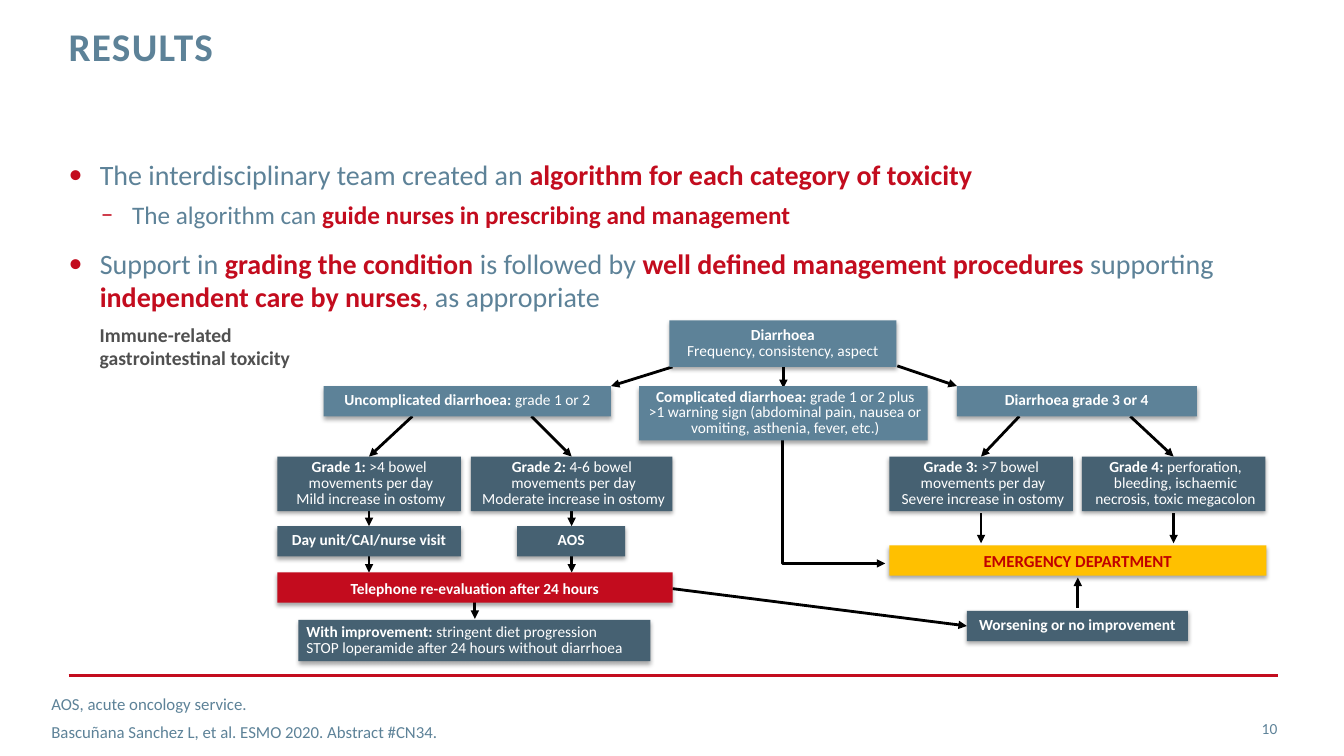
from dataclasses import dataclass

from lxml import etree
from pptx import Presentation
from pptx.dml.color import RGBColor
from pptx.enum import shapes, text
from pptx.oxml import ns
from pptx.util import Inches, Pt


@dataclass(frozen=True)
class Theme:
    font: str = "Calibri"
    blue: str = "5D8298"
    slate: str = "466172"
    red: str = "C30C1E"
    dark_red: str = "C00000"
    amber: str = "FFC000"
    grey: str = "505050"
    white: str = "FFFFFF"
    black: str = "000000"
    title: int = 28
    bullet: int = 20
    sub_bullet: int = 18
    label: int = 14
    note: int = 12
    box: int = 11
    line: int = 2


theme = Theme()
center, left_aligned = text.PP_ALIGN.CENTER, text.PP_ALIGN.LEFT


def add_runs(paragraph, runs, size):
    """Add (text, colour, bold) runs; a newline becomes a line break."""
    for words, color, bold in runs:
        for index, line in enumerate(words.split("\n")):
            if index:
                paragraph.add_line_break()
            if not line:
                continue
            run = paragraph.add_run()
            run.text = line
            run.font.name, run.font.size, run.font.bold = theme.font, Pt(size), bold
            run.font.color.rgb = RGBColor.from_string(color)


def set_frame(shape, insets=(0, 0, 0, 0), anchor=text.MSO_ANCHOR.TOP):
    """Prepare a text frame; insets are left, top, right, bottom."""
    frame = shape.text_frame
    frame.word_wrap = True
    frame.auto_size = text.MSO_AUTO_SIZE.NONE
    frame.vertical_anchor = anchor
    frame.margin_left, frame.margin_top, frame.margin_right, frame.margin_bottom = map(Inches, insets)
    return frame


presentation = Presentation()
presentation.slide_width, presentation.slide_height = Inches(13.33), Inches(7.5)
slide = presentation.slides.add_slide(presentation.slide_layouts[5])

# Title
title = slide.shapes.title
title.left, title.top, title.width, title.height = map(Inches, (0.68, 0.27, 9.56, 0.88))
paragraph = set_frame(title).paragraphs[0]
paragraph.alignment, paragraph.line_spacing = left_aligned, Pt(30)
add_runs(paragraph, [("RESULTS", theme.blue, True)], theme.title)
paragraph.runs[0].font._element.set("spc", "100")

# Bullets: level, space before, size, runs
bullets = [
    (0, 0, theme.bullet, [
        ("The interdisciplinary team created an ", theme.blue, False),
        ("algorithm for each category of toxicity", theme.red, True)]),
    (1, 6, theme.sub_bullet, [
        ("The algorithm can ", theme.blue, False),
        ("guide nurses in prescribing and management", theme.red, True)]),
    (0, 12, theme.bullet, [
        ("Support in ", theme.blue, False),
        ("grading the condition ", theme.red, True),
        ("is followed by ", theme.blue, False),
        ("well defined management procedures ", theme.red, True),
        ("supporting ", theme.blue, False),
        ("independent care by nurses", theme.red, True),
        (",", theme.red, False),
        (" as appropriate", theme.blue, False)]),
]
body = set_frame(slide.shapes.add_textbox(*map(Inches, (0.68, 1.56, 11.99, 1.63))))
for index, (level, space, size, runs) in enumerate(bullets):
    paragraph = body.add_paragraph() if index else body.paragraphs[0]
    paragraph.level = level
    properties = paragraph._p.get_or_add_pPr()
    properties.set("marL", str(Inches(0.31 + 0.32 * level)))
    properties.set("indent", str(-Inches(0.31)))
    bullet_color = etree.SubElement(properties, ns.qn("a:buClr"))
    etree.SubElement(bullet_color, ns.qn("a:srgbClr"), val=theme.red)
    etree.SubElement(properties, ns.qn("a:buFont"), typeface=theme.font)
    etree.SubElement(properties, ns.qn("a:buChar"), char="•–"[level])
    paragraph.space_before = Pt(space)
    add_runs(paragraph, runs, size)

# Label of the flow chart
label = slide.shapes.add_textbox(*map(Inches, (0.89, 3.15, 2.72, 0.57)))
paragraph = set_frame(label, (0.1, 0.05, 0.1, 0.05)).paragraphs[0]
add_runs(paragraph, [("Immune-related gastrointestinal toxicity", theme.grey, True)], theme.label)

# Arrows, drawn first so that boxes cover their starts
arrows = [
    (6.67, 3.64, 6.06, 3.83), (7.77, 3.54, 7.77, 3.85), (8.9, 3.63, 9.49, 3.83),
    (4.09, 4.13, 3.66, 4.53), (5.27, 4.13, 5.67, 4.53),
    (10.11, 4.13, 9.73, 4.53), (11.21, 4.13, 11.64, 4.53),
    (4.71, 5.83, 4.71, 6.14), (6.67, 5.84, 9.59, 6.21), (10.69, 6.03, 10.69, 5.73),
]
arrows += [(x, y, x, y + 0.3) for x in (3.66, 5.67) for y in (4.92, 5.38)]
arrows += [(x, 5.09, x, 5.39) for x in (9.73, 11.64)]
lines = [slide.shapes.add_connector(shapes.MSO_CONNECTOR.STRAIGHT, *map(Inches, ends)) for ends in arrows]

builder = slide.shapes.build_freeform(Inches(7.76), Inches(3.98))
builder.add_line_segments([(Inches(7.76), Inches(5.59)), (Inches(8.78), Inches(5.59))], close=False)
elbow = builder.convert_to_shape()
elbow.fill.background()
for arrow in lines + [elbow]:
    arrow.line.width = Pt(theme.line)
    arrow.line.color.rgb = RGBColor.from_string(theme.black)
    etree.SubElement(arrow.line._get_or_add_ln(), ns.qn("a:tailEnd"), type="triangle")

# Red rule above the footer
rule = slide.shapes.add_connector(
    shapes.MSO_CONNECTOR.STRAIGHT, *map(Inches, (0.68, 6.7, 12.68, 6.7)))
rule.line.width = Pt(theme.line)
rule.line.color.rgb = RGBColor.from_string(theme.red)
for line in lines + [elbow, rule]:
    properties = line._element.spPr
    if properties.find(ns.qn("a:effectLst")) is None:
        etree.SubElement(properties, ns.qn("a:effectLst"))

# Boxes: place, fill, left and top inset, alignment, bold lead, plain rest
row, tall = 0.3, 0.54
wide, even, low = (0.08, 0.04), (0.04, 0.04), (0.04, 0.08)
boxes = [
    ((6.64, 3.18, 2.25, 0.46), theme.blue, even, center,
     "Diarrhoea\n", "Frequency, consistency, aspect"),
    ((3.21, 3.83, 2.85, row), theme.blue, even, center,
     "Uncomplicated diarrhoea: ", "grade 1 or 2"),
    ((6.34, 3.83, 2.86, tall), theme.blue, wide, center, "Complicated diarrhoea: ",
     "grade 1 or 2 plus >1 warning sign (abdominal pain, nausea or vomiting, asthenia, fever, etc.)"),
    ((9.49, 3.83, 2.38, row), theme.blue, even, center, "Diarrhoea grade 3 or 4", ""),
    ((2.75, 4.53, 1.82, tall), theme.slate, wide, center,
     "Grade 1: ", ">4 bowel \nmovements per day\nMild increase in ostomy"),
    ((4.67, 4.53, 2, tall), theme.slate, wide, center,
     "Grade 2: ", "4-6 bowel \nmovements per day\nModerate increase in ostomy"),
    ((8.82, 4.53, 1.82, tall), theme.slate, wide, center,
     "Grade 3: ", ">7 bowel \nmovements per day\nSevere increase in ostomy"),
    ((10.73, 4.53, 1.82, tall), theme.slate, wide, center,
     "Grade 4: ", "perforation,\nbleeding, ischaemic necrosis, toxic megacolon"),
    ((2.75, 5.22, 1.82, row), theme.slate, even, center, "Day unit/CAI/nurse visit", ""),
    ((5.13, 5.22, 1.07, row), theme.slate, even, center, "AOS", ""),
    ((2.75, 5.68, 3.92, row), theme.red, low, center, "Telephone re-evaluation after 24 hours", ""),
    ((8.82, 5.41, 3.74, row), theme.amber, low, center, "EMERGENCY DEPARTMENT", ""),
    ((9.59, 6.06, 2.19, row), theme.slate, even, center, "Worsening or no improvement", ""),
    ((2.96, 6.15, 3.49, 0.41), theme.slate, wide, left_aligned, "With improvement: ",
     "stringent diet progression\nSTOP loperamide after 24 hours without diarrhoea"),
]
for place, fill, insets, alignment, lead, rest in boxes:
    box = slide.shapes.add_shape(shapes.MSO_SHAPE.ROUNDED_RECTANGLE, *map(Inches, place))
    box.adjustments[0] = 0
    box.fill.solid()
    box.fill.fore_color.rgb = RGBColor.from_string(fill)
    box.line.fill.background()
    box.shadow.inherit = False
    effects = box._element.spPr.find(ns.qn("a:effectLst"))
    shadow = etree.SubElement(effects, ns.qn("a:outerShdw"), blurRad=str(Pt(3.1)),
                              dist=str(Pt(1.8)), dir="5400000", rotWithShape="0")
    shadow_color = etree.SubElement(shadow, ns.qn("a:srgbClr"), val=theme.black)
    etree.SubElement(shadow_color, ns.qn("a:alpha"), val="35000")
    paragraph = set_frame(box, (*insets, 0.04, 0.04), text.MSO_ANCHOR.MIDDLE).paragraphs[0]
    paragraph.alignment, paragraph.line_spacing = alignment, 0.85
    color, size = (theme.dark_red, theme.note) if fill == theme.amber else (theme.white, theme.box)
    add_runs(paragraph, [(lead, color, True), (rest, color, False)], size)

# Footnotes and slide number
footer = slide.shapes.add_textbox(*map(Inches, (0.51, 6.92, 8.33, 0.4)))
frame = set_frame(footer, anchor=text.MSO_ANCHOR.MIDDLE)
notes = ["AOS, acute oncology service.", "Bascuñana Sanchez L, et al. ESMO 2020. Abstract #CN34."]
for index, note in enumerate(notes):
    paragraph = frame.add_paragraph() if index else frame.paragraphs[0]
    paragraph.space_after = Pt(6)
    add_runs(paragraph, [(note, theme.blue, False)], theme.note)

number = slide.shapes.add_textbox(*map(Inches, (11.81, 7.03, 0.86, 0.4)))
paragraph = set_frame(number, anchor=text.MSO_ANCHOR.MIDDLE).paragraphs[0]
paragraph.alignment = text.PP_ALIGN.RIGHT
add_runs(paragraph, [("10", theme.blue, False)], theme.box)

presentation.save("out.pptx")
